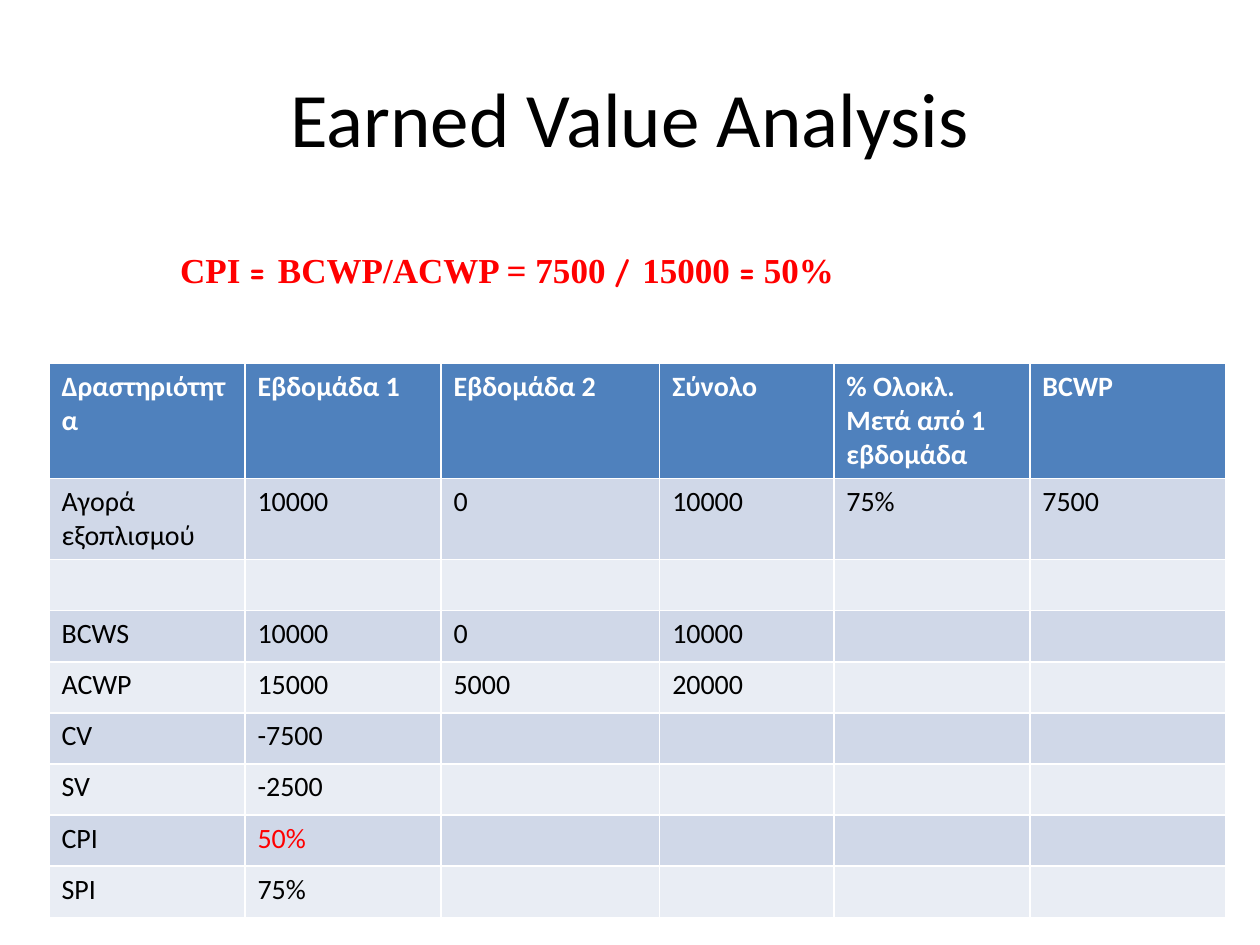
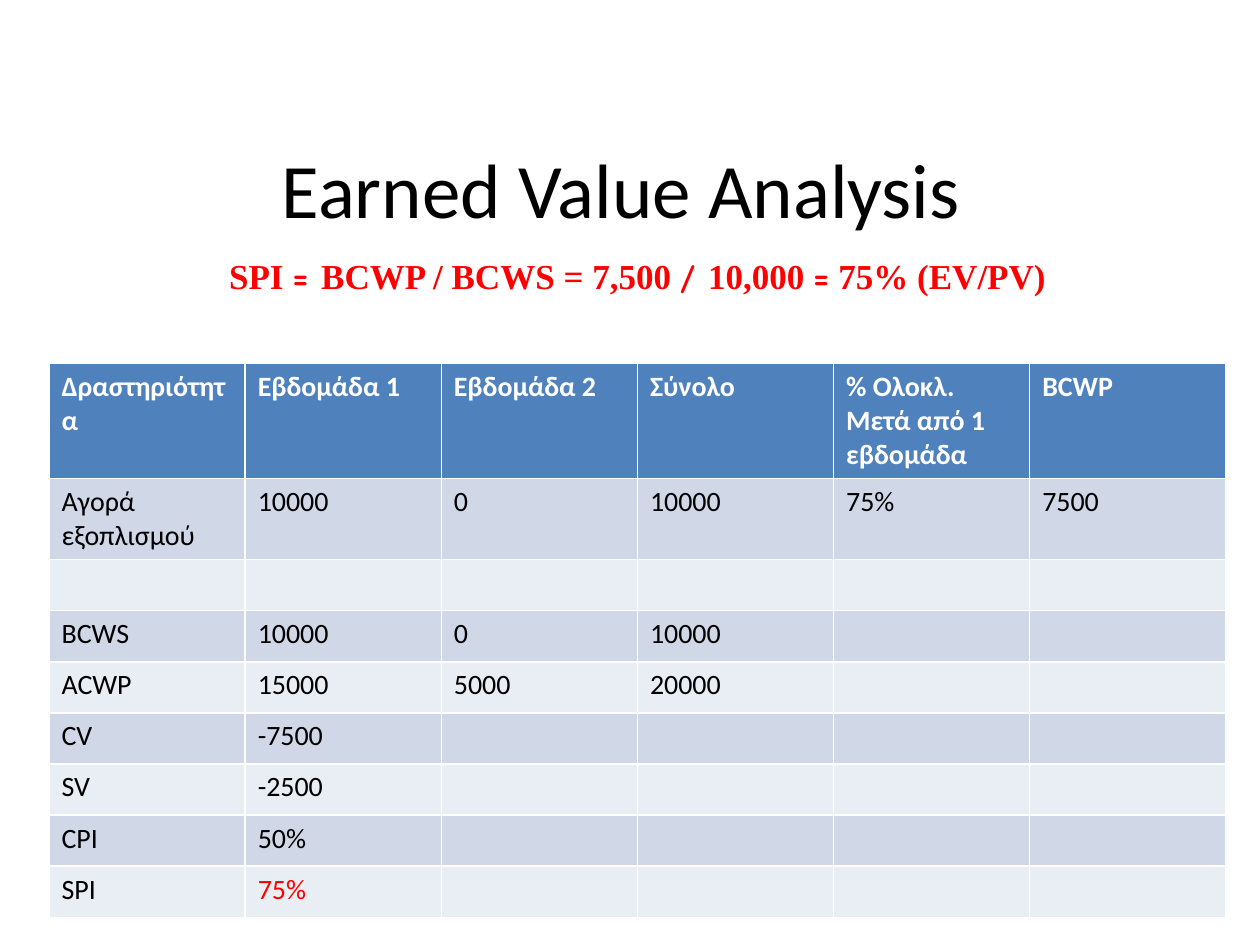
"""Build two earned value analysis slides: the CPI and the SPI calculation."""
from dataclasses import dataclass

import pptx
import pptx.dml.color
import pptx.enum.text
import pptx.util

Pt = pptx.util.Pt
Color = pptx.dml.color.RGBColor.from_string


@dataclass(frozen=True)
class Theme:
    body_font: str = "Calibri"
    formula_font: str = "Times New Roman"
    operator_font: str = "Comic Neue"
    title_size: int = 44
    formula_size: int = 20
    table_size: int = 16
    text: str = "000000"
    header_text: str = "FFFFFF"
    highlight: str = "FF0000"
    header_fill: str = "4F81BD"
    band_fills: tuple = ("E9EDF4", "D0D8E8")


theme = Theme()


def set_font(paragraph, size, color, bold=False, name=theme.body_font):
    paragraph.font.name = name
    paragraph.font.size = Pt(size)
    paragraph.font.bold = bold
    paragraph.font.color.rgb = Color(color)


TITLE = "Earned Value Analysis"
TABLE_LEFT, TABLE_TOP = 28, 207.7
ROW_HEIGHTS = [65.8, 46.3] + [29.2] * 7
ROWS = [
    ["Δραστηριότητα", "Εβδομάδα 1", "Εβδομάδα 2", "Σύνολο",
     "% Ολοκλ. Μετά από 1 εβδομάδα", "BCWP"],
    ["Αγορά εξοπλισμού", "10000", "0", "10000", "75%", "7500"],
    [],
    ["BCWS", "10000", "0", "10000"],
    ["ACWP", "15000", "5000", "20000"],
    ["CV", "-7500"],
    ["SV", "-2500"],
    ["CPI", "50%"],
    ["SPI", "75%"],
]

# Formula parts alternate between the formula font and the operator font.
SLIDES = [
    {
        "index": "CPI",
        "title_box": (36, 21.6, 648, 90),
        "formula_box": (95.8, 138.2, 401.8, 31.7),
        "formula": ["CPI ", "= ", "BCWP/ACWP = 7500 ", "/ ", "15000 ", "=", " 50%"],
        "column_widths": [112, 112, 125, 99.5, 112, 112],
    },
    {
        "index": "SPI",
        "title_box": (31, 71.3, 648, 72),
        "formula_box": (123.8, 141.8, 495.4, 31.7),
        "formula": ["SPI ", "= ", "BCWP / BCWS = 7,500 ", "/ ", "10,000 ", "=",
                    " 75% (EV/PV)"],
        "column_widths": [112.1] * 6,
    },
]

presentation = pptx.Presentation()
presentation.slide_width = Pt(720)
presentation.slide_height = Pt(540)

for content in SLIDES:
    slide = presentation.slides.add_slide(presentation.slide_layouts[6])

    formula_frame = slide.shapes.add_textbox(*map(Pt, content["formula_box"])).text_frame
    formula_frame.word_wrap = False
    formula_frame.auto_size = pptx.enum.text.MSO_AUTO_SIZE.SHAPE_TO_FIT_TEXT
    paragraph = formula_frame.paragraphs[0]
    set_font(paragraph, theme.formula_size, theme.highlight, True, theme.formula_font)
    for position, part in enumerate(content["formula"]):
        run = paragraph.add_run()
        run.text = part
        run.font.name = theme.operator_font if position % 2 else theme.formula_font

    title_frame = slide.shapes.add_textbox(*map(Pt, content["title_box"])).text_frame
    title_frame.word_wrap = True
    title_frame.vertical_anchor = pptx.enum.text.MSO_ANCHOR.MIDDLE
    paragraph = title_frame.paragraphs[0]
    paragraph.text = TITLE
    paragraph.alignment = pptx.enum.text.PP_ALIGN.CENTER
    set_font(paragraph, theme.title_size, theme.text)

    widths = content["column_widths"]
    table = slide.shapes.add_table(
        len(ROWS), len(widths), Pt(TABLE_LEFT), Pt(TABLE_TOP),
        Pt(sum(widths)), Pt(sum(ROW_HEIGHTS))).table
    for column, width in zip(table.columns, widths):
        column.width = Pt(width)

    for row_number, (row, height, values) in enumerate(zip(table.rows, ROW_HEIGHTS, ROWS)):
        row.height = Pt(height)
        is_header = row_number == 0
        fill = theme.header_fill if is_header else theme.band_fills[row_number % 2]
        for cell in row.cells:
            cell.fill.solid()
            cell.fill.fore_color.rgb = Color(fill)
        for column_number, value in enumerate(values):
            color = theme.header_text if is_header else theme.text
            if values[0] == content["index"] and column_number == 1:
                color = theme.highlight
            paragraph = row.cells[column_number].text_frame.paragraphs[0]
            paragraph.text = value
            set_font(paragraph, theme.table_size, color, is_header)

presentation.save("out.pptx")
